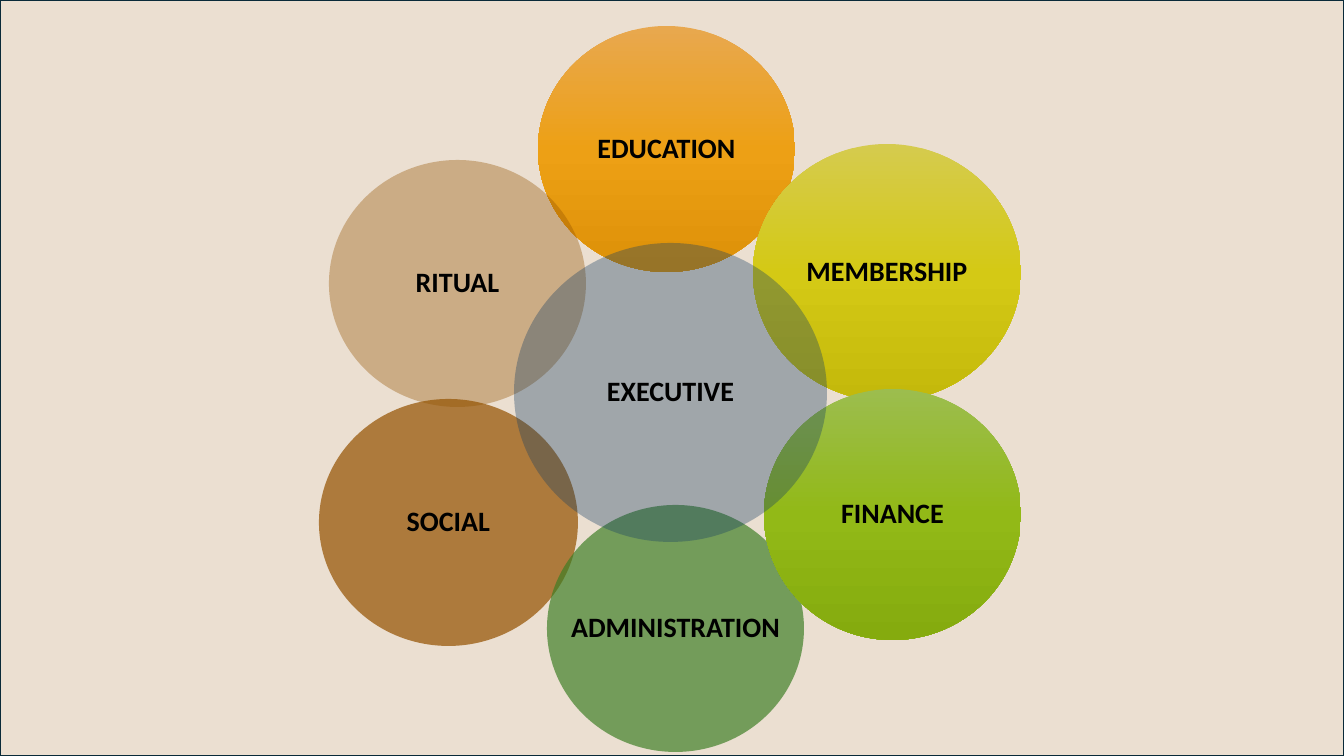
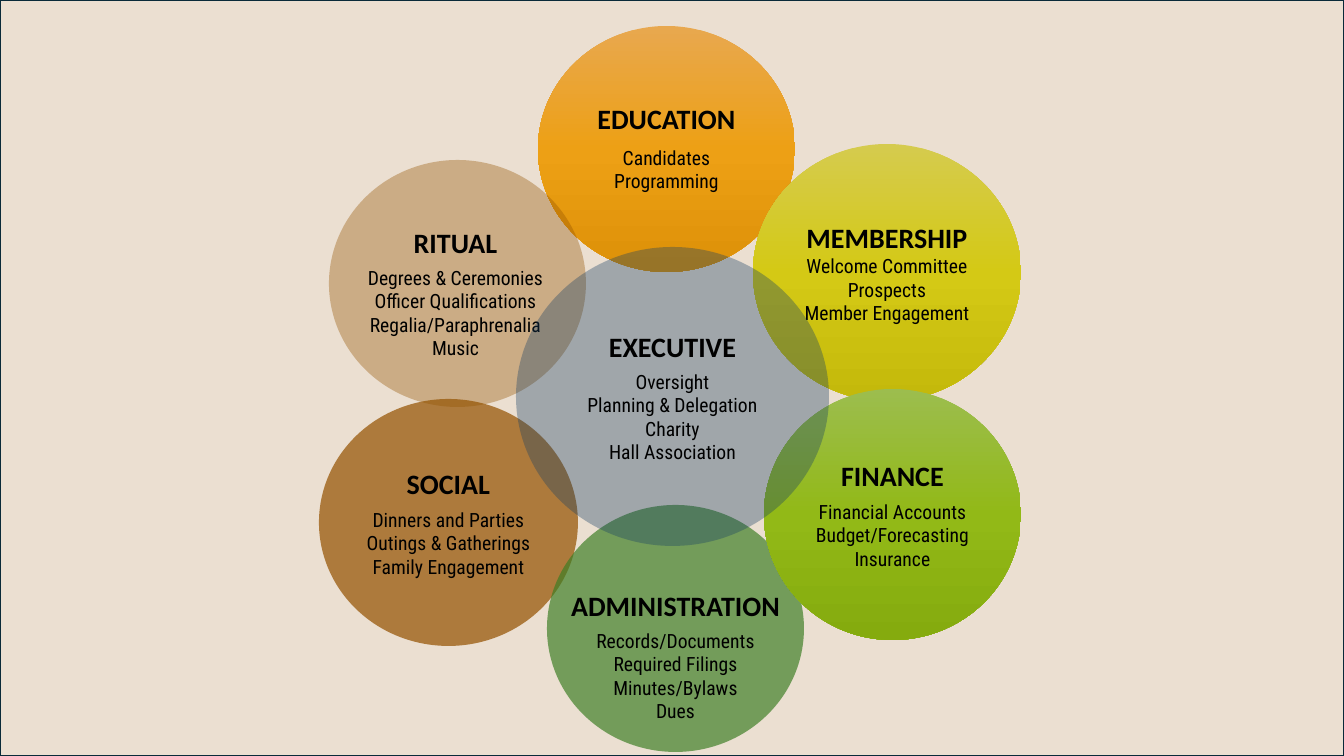
"""Build two slides that map committees around an executive circle."""
from copy import deepcopy
from pptx import Presentation
from pptx.dml.color import RGBColor
from pptx.enum.shapes import MSO_SHAPE as Form
from pptx.enum.text import MSO_ANCHOR as Anchor, PP_ALIGN as Align
from pptx.oxml.ns import qn
from pptx.oxml.xmlchemy import OxmlElement as Elem
from pptx.util import Emu, Pt

WIDE, HIGH = 1344, 756
HEAD, BODY = "Calibri", "Roboto Condensed"
INK, EDGE, EARTH = "000000", "092A39", "945200"

RING = {
    "EDUCATION": ((538, 26, 257, 246), ("E8A84F", "EDA015", "DD9108")),
    "MEMBERSHIP": ((753, 144, 268, 257), ("D5CB4E", "D4C915", "C4B90B")),
    "RITUAL": ((329, 160, 257, 247), (EARTH, 36)),
    "SOCIAL": ((319, 399, 259, 247), (EARTH, 71)),
    "ADMINISTRATION": ((547, 505, 257, 247), ("3B7D23", 68)),
    "FINANCE": ((764, 389, 257, 251), ("9CBD4E", "92B917", "85AB0E")),
    "EXECUTIVE": ((514, 243, 313, 299), ("163E64", 35)),
}
TASKS = {
    "EDUCATION": ["Candidates", "Programming"],
    "MEMBERSHIP": ["Welcome Committee", "Prospects", "Member Engagement"],
    "RITUAL": ["Degrees & Ceremonies", "Officer Qualifications",
               "Regalia/Paraphrenalia", "Music"],
    "SOCIAL": ["Dinners and Parties", "Outings & Gatherings",
               "Family Engagement"],
    "ADMINISTRATION": ["Records/Documents", "Required Filings",
                       "Minutes/Bylaws", "Dues"],
    "FINANCE": ["Financial Accounts", "Budget/Forecasting", "Insurance"],
    "EXECUTIVE": ["Oversight", "Planning & Delegation", "Charity",
                  "Hall Association"],
}
GAPS = {"EDUCATION": 7, "MEMBERSHIP": 0}
MOVES = {"EXECUTIVE": (2, 4)}
SHIFTS = {"RITUAL": (-2, 9), "ADMINISTRATION": (0, 27)}


def px(num):
    """Turn pixels into EMU."""
    return Emu(round(num * 914400 / 100.8))


def hue(code):
    """Turn a hex string into a colour."""
    return RGBColor.from_string(code)


def move(box, step):
    """Shift a box by a step."""
    return box[0] + step[0], box[1] + step[1], box[2], box[3]


def tint(shape, code, part):
    """Fill a shape with a colour at a percentage of opacity."""
    shape.fill.solid()
    shape.fill.fore_color.rgb = hue(code)
    alpha = Elem("a:alpha")
    alpha.set("val", str(part * 1000))
    shape.element.spPr.find(qn("a:solidFill"))[0].append(alpha)


def blend(shape, codes):
    """Fill a shape from top to bottom with evenly spaced colours."""
    shape.fill.gradient()
    shape.fill.gradient_angle = 270
    stops = shape.element.spPr.find(".//" + qn("a:gsLst"))
    while len(stops) < len(codes):
        stops.append(deepcopy(stops[-1]))
    for num, (stop, code) in enumerate(zip(shape.fill.gradient_stops, codes)):
        stop.color.rgb = hue(code)
        stop.position = num / (len(codes) - 1)


def draw(shapes, form, box, paint):
    """Add a painted shape without an outline."""
    shape = shapes.add_shape(form, *map(px, box))
    shape.shadow.inherit = False
    shape.line.fill.background()
    if len(paint) == 2:
        tint(shape, *paint)
    else:
        blend(shape, paint)
    return shape


def write(para, text, font, size, bold):
    """Add one centred run to a paragraph."""
    para.alignment = Align.CENTER
    run = para.add_run()
    run.text = text
    run.font.name, run.font.size, run.font.bold = font, Pt(size), bold
    run.font.color.rgb = hue(INK)


def label(shapes, box, name, tasks):
    """Add a heading and its tasks, centred in a box."""
    frame = shapes.add_textbox(*map(px, box)).text_frame
    frame.word_wrap = True
    frame.vertical_anchor = Anchor.MIDDLE
    frame.margin_left = frame.margin_right = px(2)
    frame.margin_top = frame.margin_bottom = px(2)
    top = frame.paragraphs[0]
    write(top, name, HEAD, 20, True)
    if not tasks or name == "EDUCATION":
        top.line_spacing = 0.9
    if tasks:
        top.space_after = Pt(GAPS.get(name, 5))
    for task in tasks:
        write(frame.add_paragraph(), task, BODY, 14, False)


def circle(slide, box, paint, name, tasks, shift):
    """Group a circle with its label."""
    shapes = slide.shapes.add_group_shape().shapes
    draw(shapes, Form.OVAL, box, paint)
    label(shapes, move(box, shift), name, tasks)


def chart(deck, tasks, moves, shifts):
    """Add a slide with the ring of circles."""
    slide = deck.slides.add_slide(deck.slide_layouts[6])
    back = draw(slide.shapes, Form.RECTANGLE, (0, 0, WIDE, HIGH), (EARTH, 18))
    back.line.color.rgb = hue(EDGE)
    back.line.width = Pt(1.5)
    for name, (box, paint) in RING.items():
        spot = move(box, moves.get(name, (0, 0)))
        circle(slide, spot, paint, name, tasks.get(name, []),
               shifts.get(name, (0, 0)))


def main():
    """Build and save the deck."""
    deck = Presentation()
    deck.slide_width, deck.slide_height = px(WIDE), px(HIGH)
    chart(deck, {}, {}, {})
    chart(deck, TASKS, MOVES, SHIFTS)
    deck.save("out.pptx")


if __name__ == "__main__":
    main()
